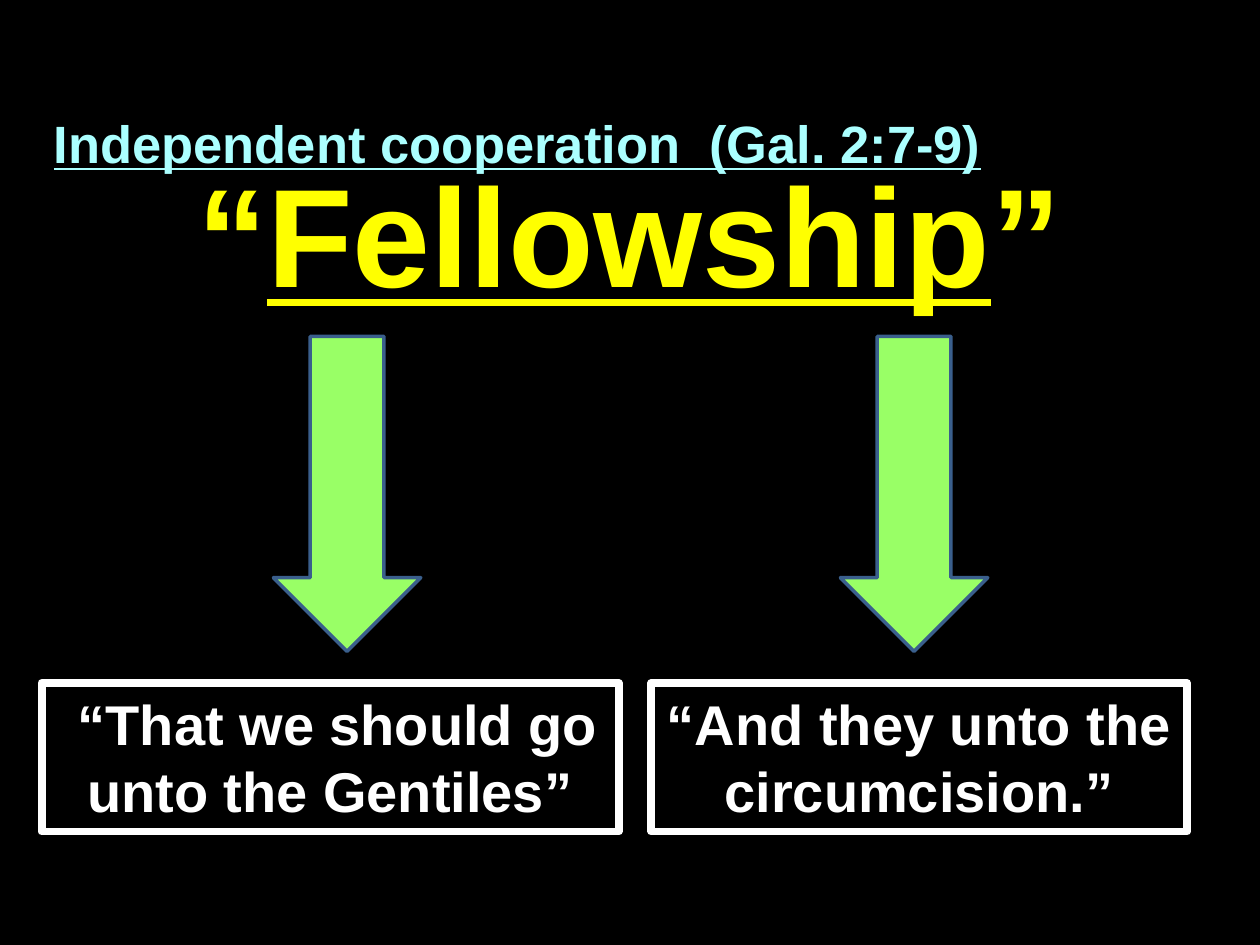
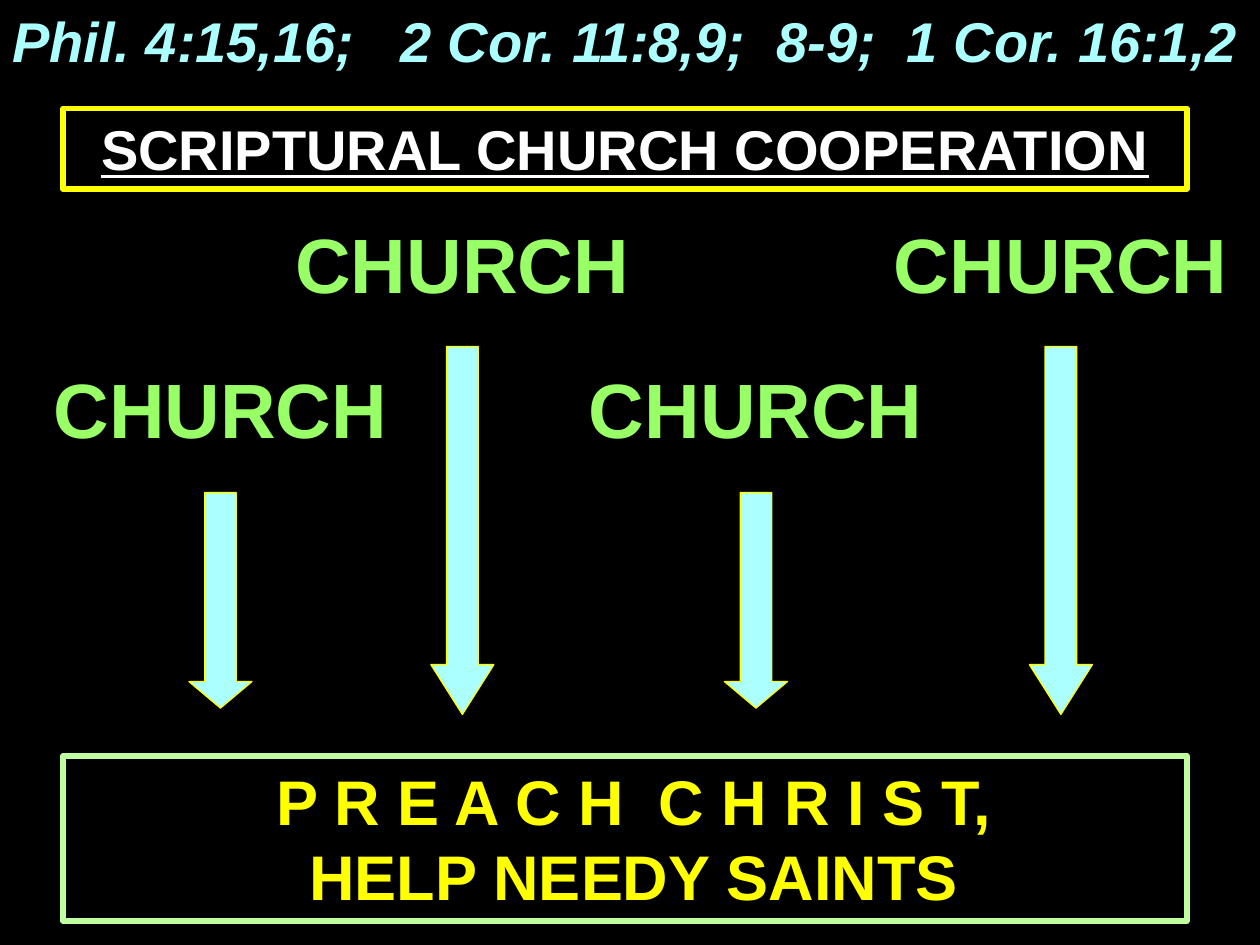
import pptx
import pptx.util
import pptx.dml.color
import pptx.enum.shapes
import pptx.enum.text

PX = 9144  # EMU per px, 100 px to the inch
FONT = "Arial"
COLORS = {
    "black": "000000",
    "white": "FFFFFF",
    "yellow": "FFFF00",
    "aqua": "ABFFFF",
    "green": "99FF66",
    "pale_green": "BFFF9F",
    "navy": "3A5F8C",
}
LEFT = pptx.enum.text.PP_ALIGN.LEFT
CENTER = pptx.enum.text.PP_ALIGN.CENTER


def rgb(name):
    return pptx.dml.color.RGBColor.from_string(COLORS[name])


def add_run(p, text, size=32, color="white", underline=False, italic=False):
    r = p.add_run()
    r.text = text
    font = r.font
    font.name, font.size, font.bold = FONT, pptx.util.Pt(size), True
    font.underline, font.italic = underline, italic
    font.color.rgb = rgb(color)


def write(p, text, align=CENTER, **style):
    """Fill a paragraph with styled text; a newline becomes a line break."""
    p.alignment = align
    for i, line in enumerate(text.split("\n")):
        if i:
            p.add_line_break()
        add_run(p, line, **style)


class Deck:
    """Holds the presentation and the slide being built."""

    def __init__(self, width, height):
        self.prs = pptx.Presentation()
        self.prs.slide_width, self.prs.slide_height = width * PX, height * PX
        self.slide = None

    def new_slide(self):
        self.slide = self.prs.slides.add_slide(self.prs.slide_layouts[6])
        fill = self.slide.background.fill
        fill.solid()
        fill.fore_color.rgb = rgb("black")

    def shape(self, kind, box, line, line_width, fill=None):
        sp = self.slide.shapes.add_shape(kind, *(v * PX for v in box))
        sp.shadow.inherit = False
        if fill:
            sp.fill.solid()
            sp.fill.fore_color.rgb = rgb(fill)
        else:
            sp.fill.background()
        sp.line.color.rgb = rgb(line)
        sp.line.width = pptx.util.Pt(line_width)
        return sp

    def text(self, box, text, **style):
        """Add a wrapped text box and return its text frame."""
        sp = self.slide.shapes.add_textbox(*(v * PX for v in box))
        tf = sp.text_frame
        tf.word_wrap = True
        write(tf.paragraphs[0], text, **style)
        return tf

    def frame(self, box, text, line, line_width, **style):
        """Add an outlined box with centred text."""
        kind = pptx.enum.shapes.MSO_SHAPE.RECTANGLE
        tf = self.shape(kind, box, line, line_width).text_frame
        tf.word_wrap = True
        tf.vertical_anchor = pptx.enum.text.MSO_ANCHOR.TOP
        write(tf.paragraphs[0], text, **style)

    def down_arrow(self, box, fill, line, line_width, head=0.5):
        """Add an arrow; head is the head length as a share of the width."""
        kind = pptx.enum.shapes.MSO_SHAPE.DOWN_ARROW
        sp = self.shape(kind, box, line, line_width, fill)
        sp.adjustments[0], sp.adjustments[1] = 0.5, head


def build_fellowship(deck):
    deck.new_slide()
    tf = deck.text((33, 83, 933, 174), "Independent cooperation  (Gal. 2:7-9)",
                   align=LEFT, size=30, color="aqua", underline=True)
    p = tf.add_paragraph()
    p.alignment = CENTER
    p.space_before, p.line_spacing = pptx.util.Pt(36), pptx.util.Pt(45)
    for text, underline in (("“", False), ("Fellowship", True), ("”", False)):
        add_run(p, text, size=80, color="yellow", underline=underline)

    for left, width, quote, arrow_left in (
        (33, 458, " “That we should go unto the Gentiles”", 217),
        (517, 425, "“And they unto the circumcision.”", 667),
    ):
        deck.frame((left, 542, width, 118), quote, "white", 4.5)
        deck.down_arrow((arrow_left, 267, 117, 250), "green", "navy", 2)


def build_cooperation(deck):
    deck.new_slide()
    deck.text((0, 0, 1000, 64),
              "Phil. 4:15,16;   2 Cor. 11:8,9;  8-9;  1 Cor. 16:1,2",
              align=LEFT, color="aqua", italic=True)
    deck.frame((50, 86, 892, 64), "SCRIPTURAL CHURCH COOPERATION",
               "yellow", 3, underline=True)
    deck.frame((50, 600, 892, 131),
               " P R E A C H  C H R I S T,\n HELP NEEDY SAINTS",
               "pale_green", 3, size=36, color="yellow")

    upper = (167, 275, 292, 0.79)
    lower = (282, 391, 171, 0.42)
    label_width, arrow_width = 300, 50
    for left, row in ((25, lower), (217, upper), (450, lower), (692, upper)):
        label_top, arrow_top, arrow_height, head = row
        deck.text((left, label_top, label_width, 84), "CHURCH",
                  size=44, color="green")
        arrow_left = left + (label_width - arrow_width) // 2
        deck.down_arrow((arrow_left, arrow_top, arrow_width, arrow_height),
                        "aqua", "yellow", 0.75, head)


def main():
    deck = Deck(1000, 750)
    build_fellowship(deck)
    build_cooperation(deck)
    deck.prs.save("out.pptx")


if __name__ == "__main__":
    main()
